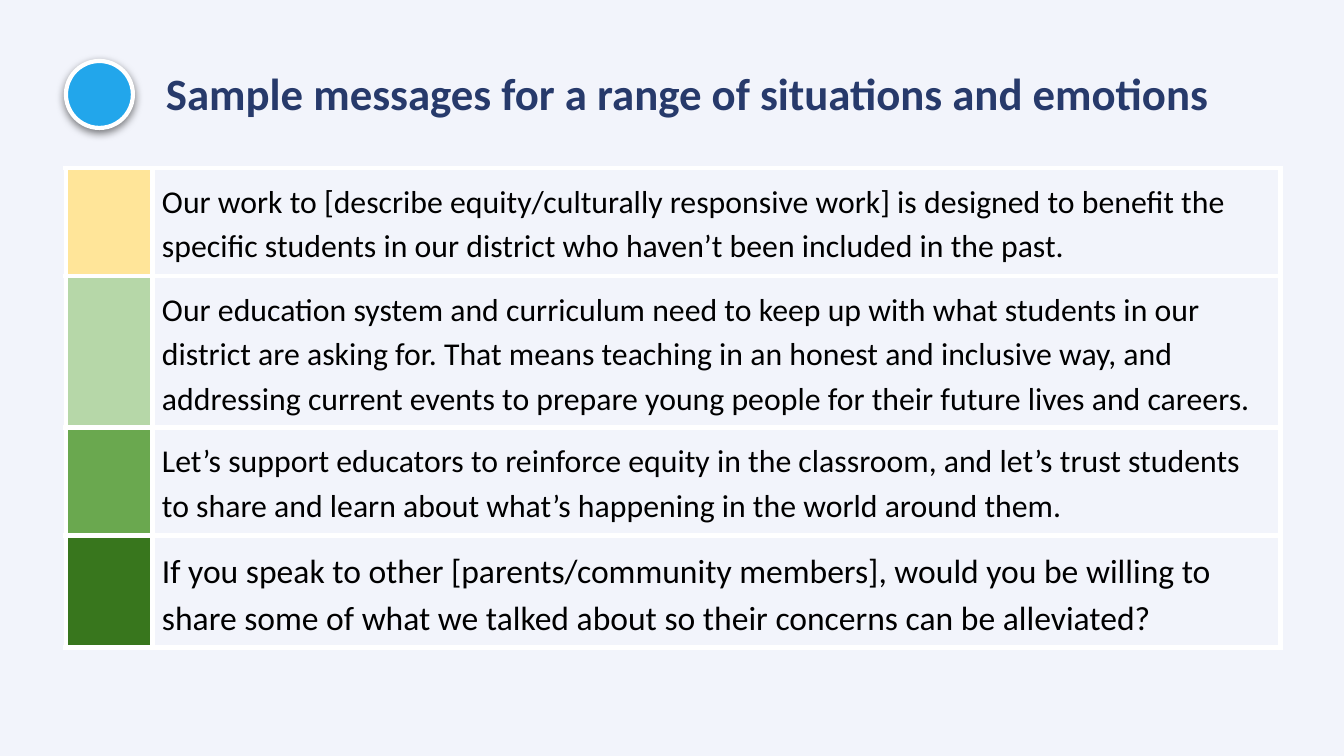
import pptx
import pptx.util
import pptx.dml.color
import pptx.enum.shapes
import pptx.enum.text
import pptx.oxml
import pptx.oxml.ns
from dataclasses import dataclass

# Content: swatch colour, message, type size
TITLE = "Sample messages for a range of situations and emotions"
MESSAGES = [
    ("FFE599", "Our work to [describe equity/culturally responsive work] is designed to benefit "
               "the specific students in our district who haven’t been included in the past.", 17),
    ("B6D7A8", "Our education system and curriculum need to keep up with what students in our "
               "district are asking for. That means teaching in an honest and inclusive way, and "
               "addressing current events to prepare young people for their future lives and "
               "careers.", 17),
    ("6AA84F", "Let’s support educators to reinforce equity in the classroom, and let’s trust "
               "students to share and learn about what’s happening in the world around them.", 17),
    ("38761D", "If you speak to other [parents/community members], would you be willing to share "
               "some of what we talked about so their concerns can be alleviated?", 18),
]

# Layout in px
SLIDE = (1344, 756)
TITLE_BOX = (153, 35, 1093, 97)
TITLE_INSET = 13
BADGE_BOX = (66, 61, 67, 67)
TABLE_AT = (66, 168)
COLUMN_WIDTHS = (87, 1128)
ROW_HEIGHTS = (108, 152, 108, 112)
CELL_INSET = 9


@dataclass(frozen=True)
class Theme:
    font: str = "Calibri"
    background: str = "F2F4FB"
    title: str = "273A6B"
    body: str = "000000"
    badge: str = "22A6EB"
    rule: str = "FFFFFF"
    title_size: int = 24
    badge_rule: float = 2.25
    table_rule: float = 3


THEME = Theme()


def px(length):
    return pptx.util.Emu(round(length * 914400 / 134.4))


def rgb(code):
    return pptx.dml.color.RGBColor.from_string(code)


def paint(fill, color):
    fill.solid()
    fill.fore_color.rgb = rgb(color)


def write(frame, text, *, size, color, bold=False, spacing=1.0):
    frame.word_wrap = True
    paragraph = frame.paragraphs[0]
    paragraph.line_spacing = spacing
    run = paragraph.add_run()
    run.text = text
    run.font.name = THEME.font
    run.font.size = pptx.util.Pt(size)
    run.font.bold = bold
    run.font.color.rgb = rgb(color)


def set_inset(box, inset):
    box.margin_left = box.margin_right = box.margin_top = box.margin_bottom = px(inset)


def add_shadow(shape, color, blur, distance):
    shape.shadow.inherit = False
    effects = shape.element.spPr.find(pptx.oxml.ns.qn("a:effectLst"))
    effects.append(pptx.oxml.parse_xml(
        f'<a:outerShdw {pptx.oxml.ns.nsdecls("a")} blurRad="{pptx.util.Pt(blur)}" '
        f'dist="{pptx.util.Pt(distance)}" dir="5400000" algn="bl" rotWithShape="0">'
        f'<a:srgbClr val="{color}"><a:alpha val="50000"/></a:srgbClr></a:outerShdw>'))


def add_borders(cell, color, width):
    properties = cell._tc.get_or_add_tcPr()
    for position, side in enumerate("LRTB"):
        properties.insert(position, pptx.oxml.parse_xml(
            f'<a:ln{side} {pptx.oxml.ns.nsdecls("a")} w="{pptx.util.Pt(width)}">'
            f'<a:solidFill><a:srgbClr val="{color}"/></a:solidFill></a:ln{side}>'))


def add_title(slide):
    frame = slide.shapes.add_textbox(*map(px, TITLE_BOX)).text_frame
    set_inset(frame, TITLE_INSET)
    frame.vertical_anchor = pptx.enum.text.MSO_ANCHOR.BOTTOM
    write(frame, TITLE, size=THEME.title_size, color=THEME.title, bold=True)


def add_badge(slide):
    badge = slide.shapes.add_shape(pptx.enum.shapes.MSO_SHAPE.OVAL, *map(px, BADGE_BOX))
    paint(badge.fill, THEME.badge)
    badge.line.color.rgb = rgb(THEME.rule)
    badge.line.width = pptx.util.Pt(THEME.badge_rule)
    add_shadow(badge, "000000", blur=4.5, distance=1.5)


def add_messages(slide):
    size = (sum(COLUMN_WIDTHS), sum(ROW_HEIGHTS))
    table = slide.shapes.add_table(
        len(MESSAGES), len(COLUMN_WIDTHS), *map(px, TABLE_AT + size)).table
    table.first_row = table.horz_banding = False
    for column, width in zip(table.columns, COLUMN_WIDTHS):
        column.width = px(width)
    for row, height, (swatch_color, message, type_size) in zip(table.rows, ROW_HEIGHTS, MESSAGES):
        row.height = px(height)
        swatch, message_cell = row.cells
        paint(swatch.fill, swatch_color)
        message_cell.fill.background()
        write(message_cell.text_frame, message, size=type_size, color=THEME.body, spacing=1.15)
        for cell in (swatch, message_cell):
            set_inset(cell, CELL_INSET)
            add_borders(cell, THEME.rule, THEME.table_rule)


def main():
    deck = pptx.Presentation()
    deck.slide_width, deck.slide_height = map(px, SLIDE)
    slide = deck.slides.add_slide(deck.slide_layouts[6])
    paint(slide.background.fill, THEME.background)
    add_title(slide)
    add_badge(slide)
    add_messages(slide)
    deck.save("out.pptx")


if __name__ == "__main__":
    main()
